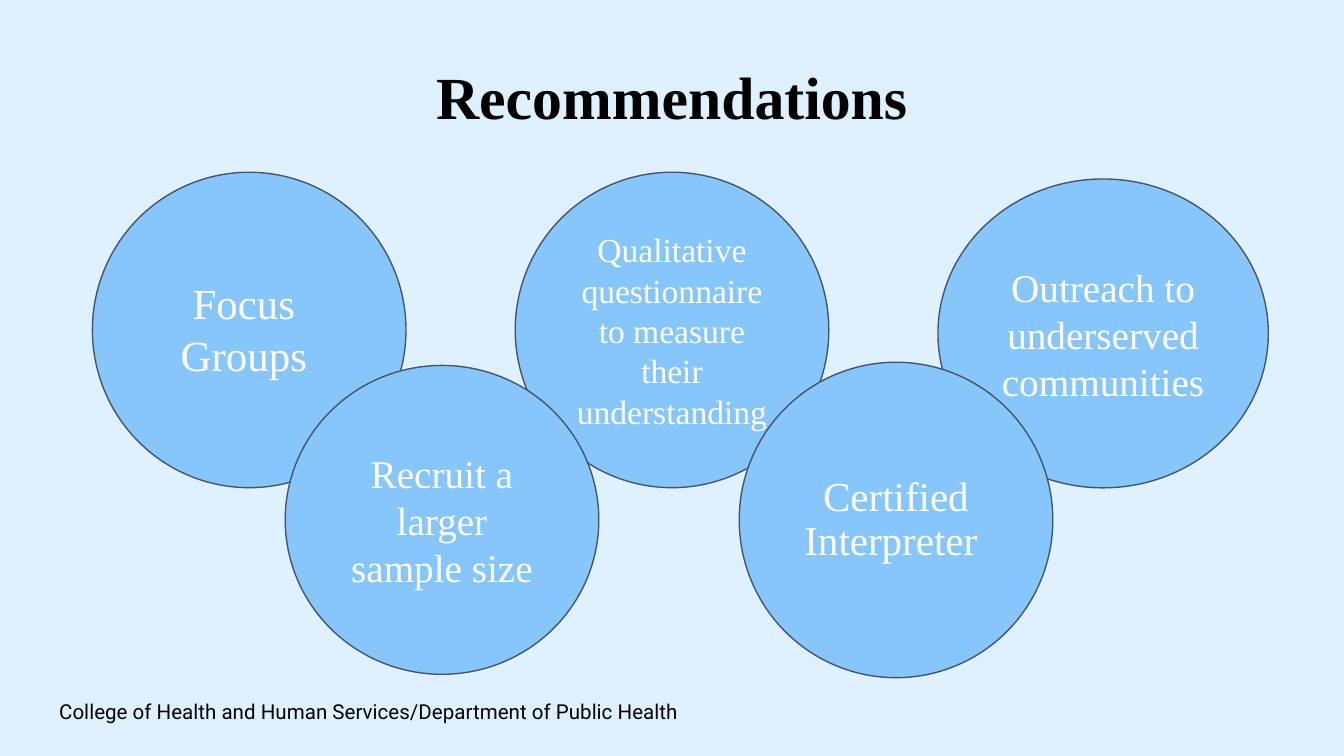
"""Build the Recommendations slide with five overlapping circles."""
from lxml import etree
from pptx import Presentation
from pptx.dml.color import RGBColor
from pptx.enum.shapes import MSO_SHAPE
from pptx.enum.text import MSO_ANCHOR, MSO_AUTO_SIZE, PP_ALIGN
from pptx.oxml.ns import qn
from pptx.util import Pt

OVAL = MSO_SHAPE.OVAL
TOP, MIDDLE = MSO_ANCHOR.TOP, MSO_ANCHOR.MIDDLE
LEFT, CENTER = PP_ALIGN.LEFT, PP_ALIGN.CENTER
NO_FIT = MSO_AUTO_SIZE.NONE
COLORS = {"bg": "DFF0FF", "circle": "86C6FA", "outline": "44546A",
          "dark": "000000", "light": "FFFFFF"}
RGB = {name: RGBColor.from_string(value) for name, value in COLORS.items()}
SERIF, SANS = "Times New Roman", "Roboto"


def write(sp, text, size, font=SERIF, color="light", bold=False, align=CENTER,
          anchor=MIDDLE, spacing=1.0, inset=7.2):
    tf = sp.text_frame
    tf.word_wrap = True
    tf.auto_size = NO_FIT
    tf.vertical_anchor = anchor
    tf.margin_left = tf.margin_right = Pt(7.2)
    tf.margin_top = tf.margin_bottom = Pt(inset)
    p = tf.paragraphs[0]
    p.alignment = align
    p.line_spacing = spacing
    p.space_before = Pt(0)
    r = p.add_run()
    r.text = text
    r.font.name = font
    r.font.size = Pt(size)
    r.font.bold = bold
    r.font.color.rgb = RGB[color]
    return p


prs = Presentation()
prs.slide_width, prs.slide_height = Pt(720), Pt(405)
s = prs.slides.add_slide(prs.slide_layouts[1])
s.background.fill.solid()
s.background.fill.fore_color.rgb = RGB["bg"]

title, footer = s.placeholders
title.left, title.top, title.width, title.height = Pt(49.7), Pt(14.4), Pt(620.6), Pt(78.5)
write(title, "Recommendations", 32, color="dark", bold=True, spacing=0.9, inset=3.6)

footer.left, footer.top, footer.width, footer.height = Pt(24.5), Pt(372.2), Pt(515.5), Pt(23.8)
p = write(footer, "College of Health and Human Services/Department of Public Health", 11,
          font=SANS, color="dark", align=LEFT, anchor=TOP, spacing=0.9, inset=3.6)
pPr = p._p.get_or_add_pPr()
pPr.set("marL", "0")
pPr.set("indent", "0")
etree.SubElement(pPr, qn("a:buNone"))

circles = [
    (49.5, 92.3, 168, 169, None, 0, 1.0),
    (276, 92.3, 168, 169, "Qualitative questionnaire to measure their understanding ", 18, 1.0),
    (152.8, 195.8, 168, 165.5, "Recruit a larger sample size", 21, 1.0),
    (502.5, 95.9, 177, 165.5, "Outreach to underserved communities ", 21, 1.0),
    (396, 194.1, 168, 169, "Certified Interpreter ", 22, 0.9),
]
for left, top, width, height, text, size, spacing in circles:
    sp = s.shapes.add_shape(OVAL, Pt(left), Pt(top), Pt(width), Pt(height))
    sp.shadow.inherit = False
    sp.fill.solid()
    sp.fill.fore_color.rgb = RGB["circle"]
    sp.line.color.rgb = RGB["outline"]
    sp.line.width = Pt(0.75)
    if text:
        write(sp, text, size, spacing=spacing)

    if text and text.startswith("Outreach"):
        label = s.shapes.add_textbox(Pt(74.2), Pt(141.1), Pt(113), Pt(70.6))
        write(label, "Focus Groups", 23, anchor=TOP)

prs.save("out.pptx")
